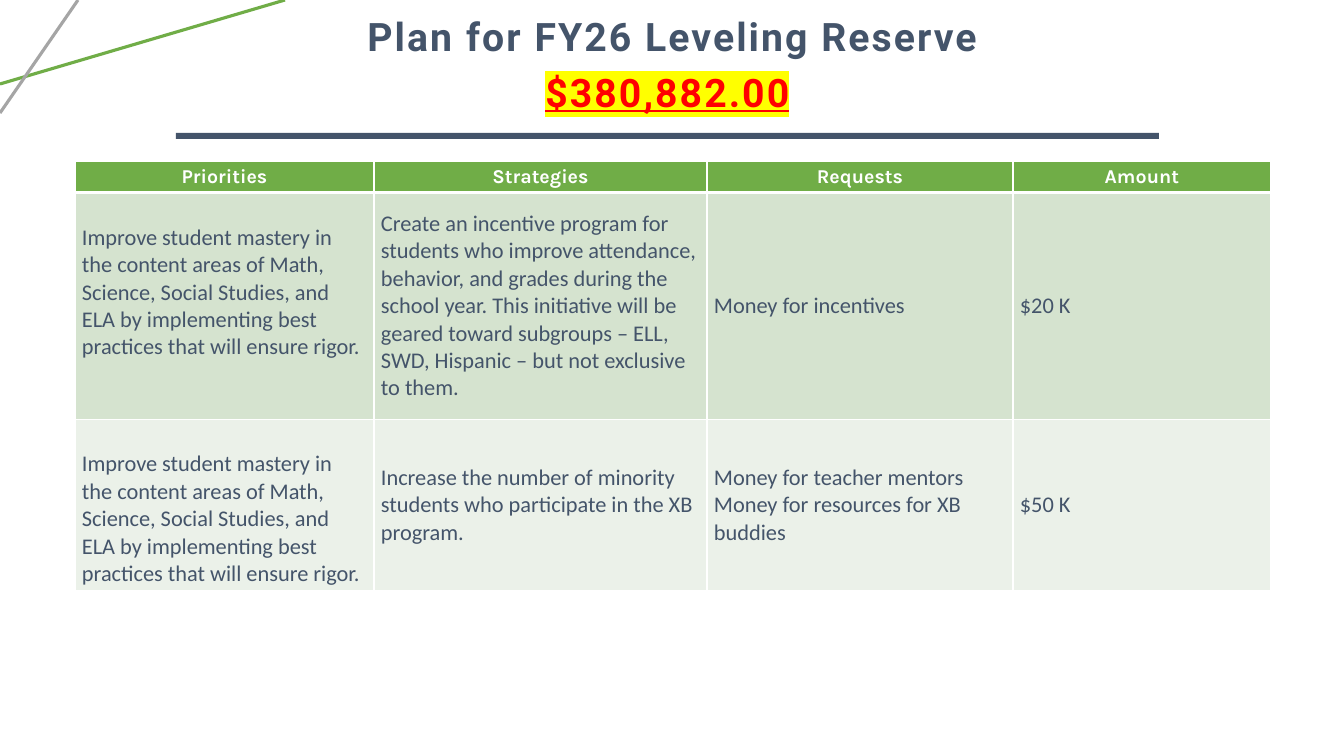
"""Build the leveling reserve slide: title, highlighted total and a priorities table."""
from lxml.etree import SubElement
from pptx import Presentation
from pptx.dml.color import RGBColor
from pptx.enum.shapes import MSO_CONNECTOR, MSO_SHAPE
from pptx.enum.text import MSO_ANCHOR, PP_ALIGN
from pptx.oxml import parse_xml
from pptx.oxml.ns import nsdecls, qn
from pptx.util import Emu, Pt

NAVY, GREEN, GRAY, WHITE = "44546A", "70AD47", "A5A5A5", "FFFFFF"
color = RGBColor.from_string


def px(*lengths):
    return [Emu(round(length * 914400 / 100.8)) for length in lengths]


def add_span(para, text, font, size, fill, bold=False):
    span = para.add_run()
    span.text = text
    span.font.name = font
    span.font.size = Pt(size)
    span.font.bold = bold
    span.font.color.rgb = color(fill)
    return span


deck = Presentation()
deck.slide_width, deck.slide_height = px(1344, 756)
page = deck.slides.add_slide(deck.slide_layouts[6])

for ends, stroke in [((0, 84, 285, 0), GREEN), ((78, 0, 0, 113), GRAY)]:
    accent = page.shapes.add_connector(MSO_CONNECTOR.STRAIGHT, *px(*ends))
    accent.line.color.rgb = color(stroke)
    accent.line.width = Pt(2.25)
    SubElement(accent.element.spPr, qn("a:effectLst"))

headings = [
    ("Plan for FY26 Leveling Reserve", (93, 4, 1159, 69), NAVY, False),
    ("$380,882.00", (152, 48, 1031, 93), "FF0000", True),
]
for text, place, fill, marked in headings:
    box = page.shapes.add_textbox(*px(*place))
    box.text_frame.word_wrap = True
    box.text_frame.vertical_anchor = MSO_ANCHOR.MIDDLE
    para = box.text_frame.paragraphs[0]
    para.alignment = PP_ALIGN.CENTER
    para.line_spacing = 0.9
    span = add_span(para, text, "Roboto", 28, fill, True)
    properties = span.font._element
    properties.set("spc", "150")
    if marked:
        span.font.underline = True
        properties.find(qn("a:solidFill")).addnext(parse_xml(
            f'<a:highlight {nsdecls("a")}><a:srgbClr val="FFFF00"/></a:highlight>'))

rule = page.shapes.add_shape(MSO_SHAPE.RECTANGLE, *px(176, 133, 983, 6))
rule.shadow.inherit = False
rule.fill.solid()
rule.fill.fore_color.rgb = color(NAVY)
rule.line.fill.background()

mastery = ("Improve student mastery in the content areas of Math, Science, Social Studies, "
           "and ELA by implementing best practices that will ensure rigor.")
incentive = ("Create an incentive program for students who improve attendance, behavior, and "
             "grades during the school year. This initiative will be geared toward subgroups "
             "– ELL, SWD, Hispanic – but not exclusive to them.")
minority = "Increase the number of minority students who participate in the XB program."
rows = [
    (["Priorities"], ["Strategies"], ["Requests"], ["Amount"]),
    ([mastery], [incentive], ["Money for incentives"], ["$20 K"]),
    ([mastery], [minority],
     ["Money for teacher mentors", "Money for resources for XB buddies"], ["$50 K"]),
]
column_widths = px(299, 333, 306, 258)
row_heights = px(30, 227, 171)
row_fills = [GREEN, "D5E3CF", "EBF1E9"]

table = page.shapes.add_table(
    len(rows), len(column_widths), *px(75, 161), sum(column_widths), sum(row_heights)).table
table.horz_banding = False
for column, width in zip(table.columns, column_widths):
    column.width = width
for row, height in zip(table.rows, row_heights):
    row.height = height

for row_index, row in enumerate(rows):
    header = row_index == 0
    for column_index, lines in enumerate(row):
        cell = table.cell(row_index, column_index)
        cell.vertical_anchor = MSO_ANCHOR.MIDDLE
        cell.margin_left, cell.margin_right, cell.margin_top, cell.margin_bottom = px(7, 7, 4, 4)
        cell.fill.solid()
        cell.fill.fore_color.rgb = color(row_fills[row_index])
        widths = {"lnL": 1, "lnR": 1, "lnT": 3 if row_index == 1 else 1, "lnB": 3 if header else 1}
        for position, (side, width) in enumerate(widths.items()):
            cell._tc.tcPr.insert(position, parse_xml(
                f'<a:{side} {nsdecls("a")} w="{Pt(width)}"><a:solidFill>'
                f'<a:srgbClr val="{WHITE}"/></a:solidFill></a:{side}>'))
        for line_index, line in enumerate(lines):
            frame = cell.text_frame
            para = frame.add_paragraph() if line_index else frame.paragraphs[0]
            if header:
                para.alignment = PP_ALIGN.CENTER
                add_span(para, line, "Karla", 14, WHITE, True)
            else:
                add_span(para, line, "Calibri", 16, NAVY)

table.cell(1, 0).margin_bottom, table.cell(2, 0).margin_top = px(31, 31)

deck.save("out.pptx")
